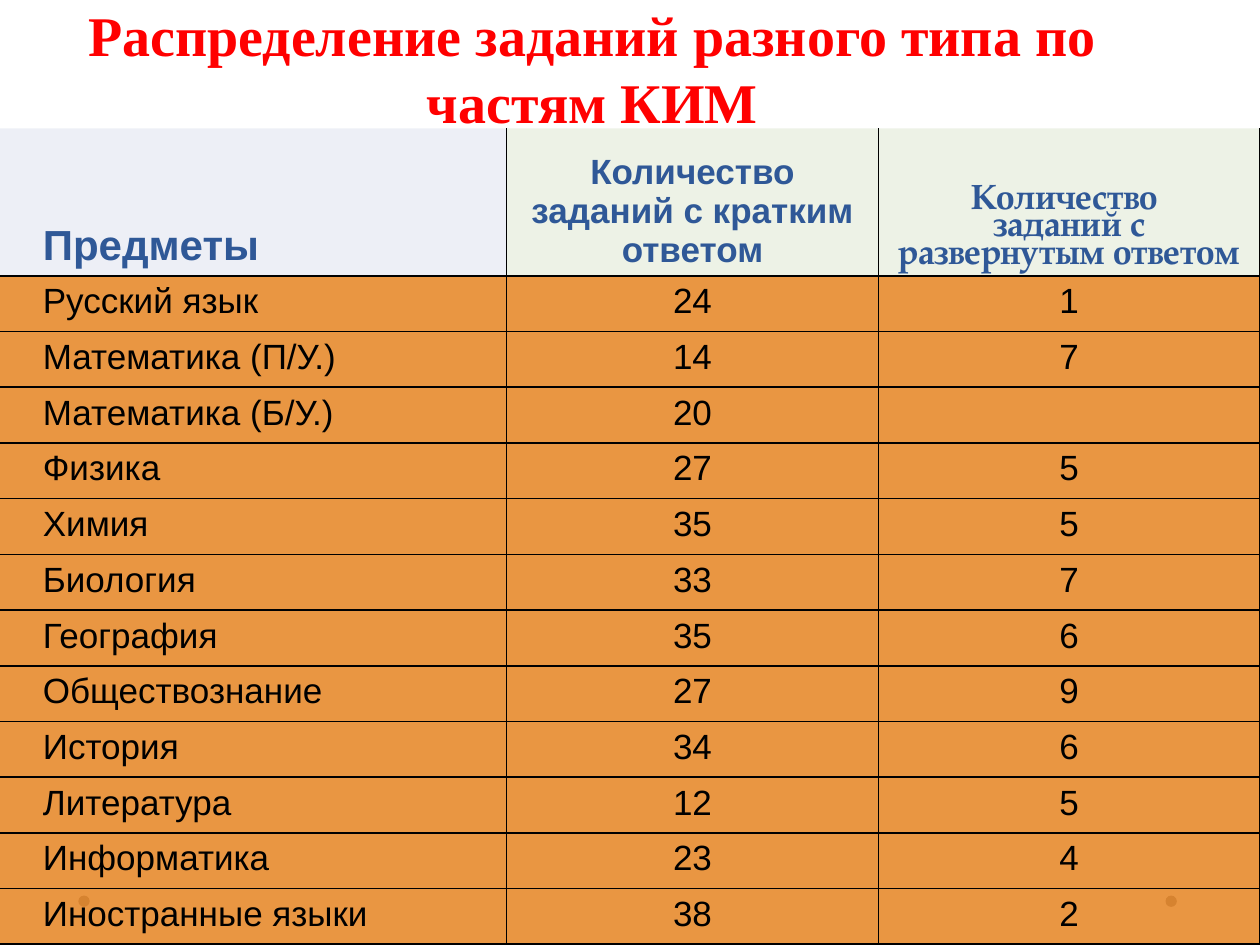
"""Build a slide with a table of exam task counts by subject."""
from lxml import etree
from pptx import Presentation
from pptx.dml.color import RGBColor
from pptx.enum.shapes import MSO_SHAPE
from pptx.enum.text import MSO_ANCHOR, MSO_AUTO_SIZE, PP_ALIGN
from pptx.oxml.ns import qn
from pptx.util import Pt

OVAL = MSO_SHAPE.OVAL
TOP, MIDDLE, BOTTOM = MSO_ANCHOR.TOP, MSO_ANCHOR.MIDDLE, MSO_ANCHOR.BOTTOM
LEFT, CENTER = PP_ALIGN.LEFT, PP_ALIGN.CENTER
NO_FIT = MSO_AUTO_SIZE.NONE

RED = RGBColor(0xFF, 0x00, 0x00)
BLACK = RGBColor(0x00, 0x00, 0x00)
GRAY = RGBColor(0x80, 0x80, 0x80)
NAVY = RGBColor(0x2F, 0x58, 0x97)
BLUE = RGBColor(0x60, 0x76, 0xB4)
GREEN = RGBColor(0x63, 0x89, 0x1F)
ORANGE = RGBColor(0xE6, 0x84, 0x22)

HEADERS = [
    "Предметы",
    "Количество заданий с кратким ответом",
    "Количество \nзаданий с развернутым ответом",
]
SUBJECTS = [
    ("Русский язык", "24", "1"),
    ("Математика (П/У.)", "14", "7"),
    ("Математика (Б/У.)", "20", ""),
    ("Физика", "27", "5"),
    ("Химия", "35", "5"),
    ("Биология", "33", "7"),
    ("География", "35", "6"),
    ("Обществознание", "27", "9"),
    ("История", "34", "6"),
    ("Литература", "12", "5"),
    ("Информатика", "23", "4"),
    ("Иностранные языки", "38", "2"),
]
ROWS = [HEADERS, *SUBJECTS]
COLUMN_WIDTHS = [289.5, 212.5, 218]
HEADER_HEIGHT = 84.24
ROW_HEIGHT = 31.86


def fill_cell(cell, color, opacity):
    cell.fill.solid()
    cell.fill.fore_color.rgb = color
    for tint in cell._tc.tcPr.iter(qn("a:srgbClr")):
        etree.SubElement(tint, qn("a:alpha"), val=str(opacity * 1000))


def set_borders(cell, widths):
    properties = cell._tc.get_or_add_tcPr()
    for index, (side, width) in enumerate(widths.items()):
        line = etree.Element(qn(f"a:ln{side}"), w=str(Pt(width)))
        if width:
            fill = etree.SubElement(line, qn("a:solidFill"))
            etree.SubElement(fill, qn("a:srgbClr"), val=str(BLACK))
        else:
            etree.SubElement(line, qn("a:noFill"))
        properties.insert(index, line)


deck = Presentation()
deck.slide_width, deck.slide_height = Pt(720), Pt(540)
page = deck.slides.add_slide(deck.slide_layouts[5])

title = page.shapes.title
title.left, title.top, title.width, title.height = Pt(31), Pt(0), Pt(615), Pt(77)
title.text_frame.text = "Распределение заданий разного типа по частям КИМ"
title.text_frame.auto_size = NO_FIT
title.text_frame.vertical_anchor = MIDDLE
title_para = title.text_frame.paragraphs[0]
title_para.alignment = CENTER
for span in title_para.runs:
    span.font.name = "Times New Roman"
    span.font.size = Pt(32)
    span.font.bold = True
    span.font.color.rgb = RED

for dot_left in (44.75, 666):
    dot = page.shapes.add_shape(OVAL, Pt(dot_left), Pt(511.75), Pt(6.5), Pt(6.5))
    dot.shadow.inherit = False
    dot.fill.solid()
    dot.fill.fore_color.rgb = GRAY
    dot.line.fill.background()

table_height = HEADER_HEIGHT + ROW_HEIGHT * len(SUBJECTS)
table = page.shapes.add_table(
    len(ROWS), len(HEADERS), Pt(0), Pt(73.4), Pt(720), Pt(table_height)
).table
table.horz_banding = False
for column, width in zip(table.columns, COLUMN_WIDTHS):
    column.width = Pt(width)
for row_index, row in enumerate(table.rows):
    row.height = Pt(ROW_HEIGHT if row_index else HEADER_HEIGHT)

for row_index, texts in enumerate(ROWS):
    is_header = row_index == 0
    is_last = row_index == len(ROWS) - 1
    for column_index, text in enumerate(texts):
        is_subject = column_index == 0
        cell = table.cell(row_index, column_index)
        cell.vertical_anchor = BOTTOM if is_header else TOP
        if is_header:
            fill_cell(cell, BLUE if is_subject else GREEN, 11)
        else:
            fill_cell(cell, ORANGE, 85)
        set_borders(cell, {
            "L": 0 if is_subject else 1,
            "R": 1,
            "T": 0 if is_header else 1,
            "B": 2.25 if is_last else 1,
        })
        cell.text_frame.text = text
        for para in cell.text_frame.paragraphs:
            para.alignment = LEFT if is_subject else CENTER
            if is_subject:
                para._p.get_or_add_pPr().set("marL", str(Pt(17.28)))
            if is_header and column_index == 2:
                para.line_spacing = 0.8
            for span in para.runs:
                span.font.name = "TeX Gyre Pagella" if is_header and column_index == 2 else "Arial"
                span.font.size = Pt(24 if is_header and is_subject else 20)
                span.font.bold = is_header
                span.font.color.rgb = NAVY if is_header else BLACK

deck.save("out.pptx")
